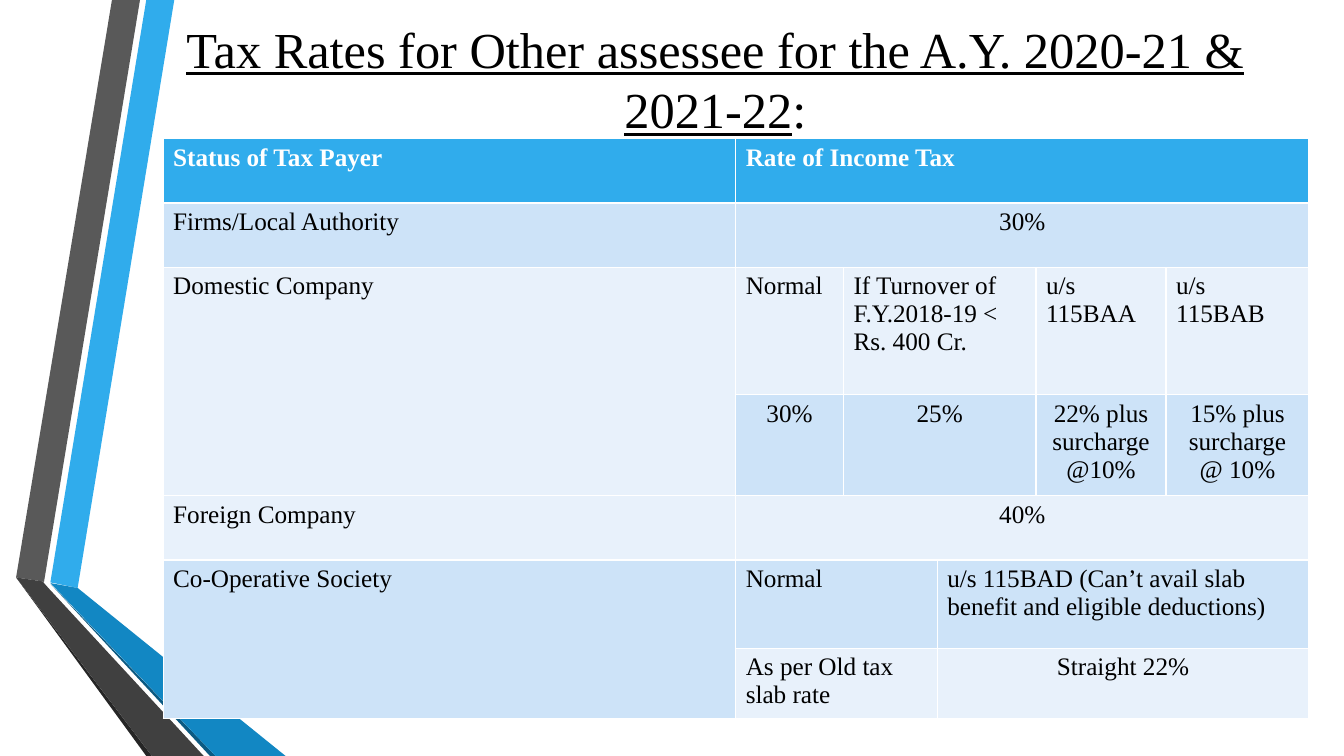
from dataclasses import dataclass

from pptx import Presentation
from pptx.dml.color import RGBColor
from pptx.enum import text as t
from pptx.util import Pt


@dataclass(frozen=True)
class Theme:
    font: str = "Times New Roman"
    title_size: int = 36
    cell_size: int = 18
    ink: str = "000000"
    paper: str = "FFFFFF"
    blue: str = "30ACEC"
    blue_mid: str = "1287C3"
    blue_deep: str = "0C5A82"
    gray: str = "595959"
    gray_mid: str = "404040"
    gray_deep: str = "262626"
    band_dark: str = "CDE3F8"
    band_light: str = "E8F1FB"


TH = Theme()
LEFT, CENTER = t.PP_ALIGN.LEFT, t.PP_ALIGN.CENTER

RIBBONS = [
    (TH.blue, [(36, 416), (55.5, 420), (124.5, 0), (104.5, 0)]),
    (TH.gray, [(100, 0), (80, 0), (11.5, 412.5), (31.5, 415.5)]),
    (TH.gray_deep, [(11.5, 412.5), (104.5, 540), (108.5, 540)]),
    (TH.blue_deep, [(36, 417), (150, 540), (154, 540)]),
    (TH.blue_mid, [(36, 416.5), (154, 540), (204, 540), (55.5, 420)]),
    (TH.gray_mid, [(145.5, 540), (34.5, 420), (31, 416), (31.5, 415.5),
                   (11.5, 412.5), (108.5, 540)]),
]

COLS = [409, 77, 67, 70.5, 93, 102]
ROWS = [46, 46, 91, 67, 46, 63, 46]

# row, column, row span, column span, wording, alignment
CELLS = [
    (0, 0, 1, 1, "Status of Tax Payer", LEFT),
    (0, 1, 1, 5, "Rate of Income Tax", LEFT),
    (1, 0, 1, 1, "Firms/Local Authority", LEFT),
    (1, 1, 1, 5, "30%", CENTER),
    (2, 0, 2, 1, "Domestic Company", LEFT),
    (2, 1, 1, 1, "Normal", LEFT),
    (2, 2, 1, 2, "If Turnover of F.Y.2018-19 < Rs. 400 Cr.", LEFT),
    (2, 4, 1, 1, "u/s 115BAA", LEFT),
    (2, 5, 1, 1, "u/s 115BAB", LEFT),
    (3, 1, 1, 1, "30%", CENTER),
    (3, 2, 1, 2, "25%", CENTER),
    (3, 4, 1, 1, "22% plus surcharge @10%", CENTER),
    (3, 5, 1, 1, "15% plus surcharge @ 10%", CENTER),
    (4, 0, 1, 1, "Foreign Company", LEFT),
    (4, 1, 1, 5, "40%", CENTER),
    (5, 0, 2, 1, "Co-Operative Society", LEFT),
    (5, 1, 1, 2, "Normal", LEFT),
    (5, 3, 1, 3, "u/s 115BAD (Can’t avail slab benefit and eligible deductions)", LEFT),
    (6, 1, 1, 2, "As per Old tax slab rate", LEFT),
    (6, 3, 1, 3, "Straight 22%", CENTER),
]


def rgb(color):
    return RGBColor.from_string(color)


def style(p, size, color, align, bold=False):
    p.alignment = align
    p.font.name = TH.font
    p.font.size = Pt(size)
    p.font.bold = bold
    p.font.color.rgb = rgb(color)


def add_ribbons(s, x, y):
    for color, points in RIBBONS:
        start, *rest = [(Pt(px), Pt(py)) for px, py in points]
        builder = s.shapes.build_freeform(*start)
        builder.add_line_segments(rest, close=True)
        sp = builder.convert_to_shape(Pt(x), Pt(y))
        sp.shadow.inherit = False
        sp.fill.solid()
        sp.fill.fore_color.rgb = rgb(color)
        sp.line.fill.background()


def add_title(s, x, y, w, h):
    tf = s.shapes.add_textbox(Pt(x), Pt(y), Pt(w), Pt(h)).text_frame
    tf.word_wrap = True
    tf.vertical_anchor = t.MSO_ANCHOR.MIDDLE
    tf.margin_top, tf.margin_bottom = Pt(0), Pt(36)
    p = tf.paragraphs[0]
    style(p, TH.title_size, TH.ink, CENTER)
    r = p.add_run()
    r.text = "Tax Rates for Other assessee for the A.Y. 2020-21 & 2021-22"
    r.font.underline = True
    p.add_run().text = ":"


def row_fill(row):
    if row == 0:
        return TH.blue
    return TH.band_dark if row % 2 else TH.band_light


def add_rates(s, x, y):
    frame = s.shapes.add_table(len(ROWS), len(COLS), Pt(x), Pt(y),
                               Pt(sum(COLS)), Pt(sum(ROWS)))
    table = frame.table
    for column, width in zip(table.columns, COLS):
        column.width = Pt(width)
    for i, (row, height) in enumerate(zip(table.rows, ROWS)):
        row.height = Pt(height)
        for cell in row.cells:
            cell.fill.solid()
            cell.fill.fore_color.rgb = rgb(row_fill(i))
    for row, col, down, across, wording, align in CELLS:
        cell = table.cell(row, col)
        if down * across > 1:
            cell.merge(table.cell(row + down - 1, col + across - 1))
        p = cell.text_frame.paragraphs[0]
        p.add_run().text = wording
        header = row == 0
        style(p, TH.cell_size, TH.paper if header else TH.ink, align, header)


def main():
    prs = Presentation()
    prs.slide_width, prs.slide_height = Pt(960), Pt(540)
    s = prs.slides.add_slide(prs.slide_layouts[6])
    s.background.fill.solid()
    s.background.fill.fore_color.rgb = rgb(TH.paper)
    add_ribbons(s, 0, 0)
    add_title(s, 116.5, 14.5, 789, 119)
    add_rates(s, 116.5, 99)
    prs.save("out.pptx")


if __name__ == "__main__":
    main()
